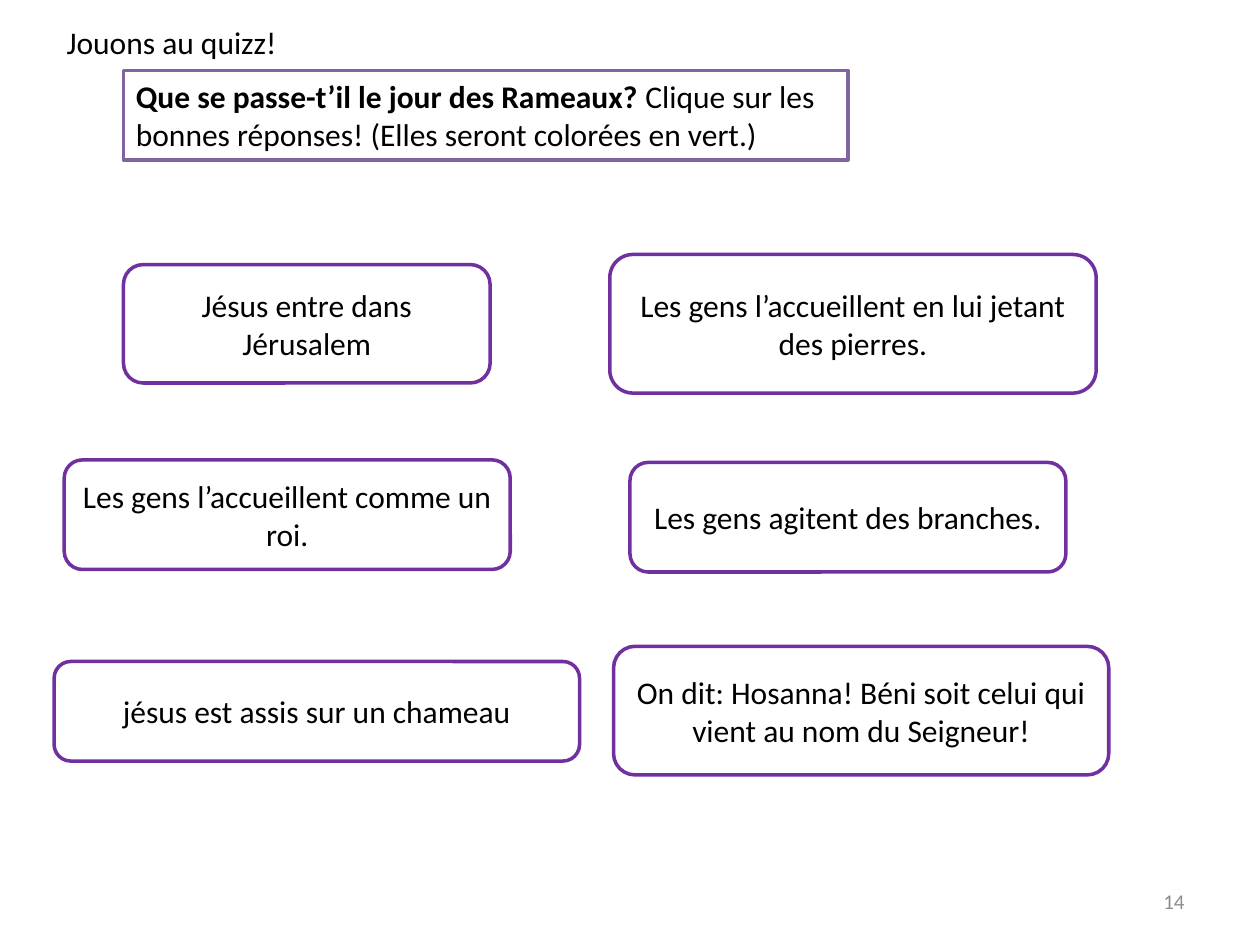
from typing import NamedTuple

from pptx import Presentation
from pptx.dml.color import RGBColor
from pptx.enum.shapes import MSO_SHAPE
from pptx.enum.text import MSO_ANCHOR, PP_ALIGN
from pptx.util import Inches, Pt

BLACK = RGBColor(0x00, 0x00, 0x00)
WHITE = RGBColor(0xFF, 0xFF, 0xFF)
GREY = RGBColor(0x8C, 0x8C, 0x8C)
MAUVE = RGBColor(0x80, 0x64, 0xA2)
PURPLE = RGBColor(0x70, 0x30, 0xA0)


class Box(NamedTuple):
    left: float
    top: float
    width: float
    height: float


class Answer(NamedTuple):
    text: str
    box: Box


ANSWERS = [
    Answer("Jésus entre dans Jérusalem", Box(0.98, 2.1, 2.91, 0.94)),
    Answer("Les gens l’accueillent en lui jetant des pierres.",
           Box(4.84, 2.02, 3.86, 1.1)),
    Answer("Les gens l’accueillent comme un roi.", Box(0.51, 3.65, 3.54, 0.87)),
    Answer("jésus est assis sur un chameau", Box(0.43, 5.25, 4.17, 0.79)),
    Answer("Les gens agitent des branches.", Box(5, 3.67, 3.46, 0.87)),
    Answer("On dit: Hosanna! Béni soit celui qui vient au nom du Seigneur!",
           Box(4.87, 5.13, 3.93, 1.02)),
]


def write(shape, text: str, align=PP_ALIGN.LEFT, anchor=MSO_ANCHOR.TOP,
          size: int = 18, color: RGBColor = BLACK):
    frame = shape.text_frame
    frame.text = text
    frame.word_wrap = True
    frame.vertical_anchor = anchor
    par = frame.paragraphs[0]
    par.alignment = align
    for run in par.runs:
        style(run, size, color)
    return par


def style(run, size: int = 18, color: RGBColor = BLACK, bold: bool = False) -> None:
    run.font.name = "Calibri"
    run.font.size = Pt(size)
    run.font.bold = bold
    run.font.color.rgb = color


def add_label(slide, box: Box):
    return slide.shapes.add_textbox(*map(Inches, box))


def add_frame(slide, kind, box: Box, color: RGBColor):
    shape = slide.shapes.add_shape(kind, *map(Inches, box))
    shape.shadow.inherit = False
    shape.fill.solid()
    shape.fill.fore_color.rgb = WHITE
    shape.line.color.rgb = color
    shape.line.width = Pt(2)
    return shape


def main() -> None:
    deck = Presentation()
    deck.slide_width, deck.slide_height = Inches(10), Inches(7.5)
    slide = deck.slides.add_slide(deck.slide_layouts[6])

    # Heading
    write(add_label(slide, Box(0.43, 0.13, 3.62, 0.4)), "Jouons au quizz!")

    # Question
    panel = add_frame(slide, MSO_SHAPE.RECTANGLE, Box(0.98, 0.56, 5.75, 0.71), MAUVE)
    par = write(panel, "Que se passe-t’il le jour des Rameaux? ")
    par.runs[0].font.bold = True
    hint = par.add_run()
    hint.text = "Clique sur les bonnes réponses! (Elles seront colorées en vert.)"
    style(hint)

    # Answers
    for item in ANSWERS:
        shape = add_frame(slide, MSO_SHAPE.ROUNDED_RECTANGLE, item.box, PURPLE)
        write(shape, item.text, PP_ALIGN.CENTER, MSO_ANCHOR.MIDDLE)

    # Page number
    write(add_label(slide, Box(7.17, 6.95, 2.33, 0.4)), "14",
          PP_ALIGN.RIGHT, MSO_ANCHOR.MIDDLE, 12, GREY)

    deck.save("out.pptx")


if __name__ == "__main__":
    main()
